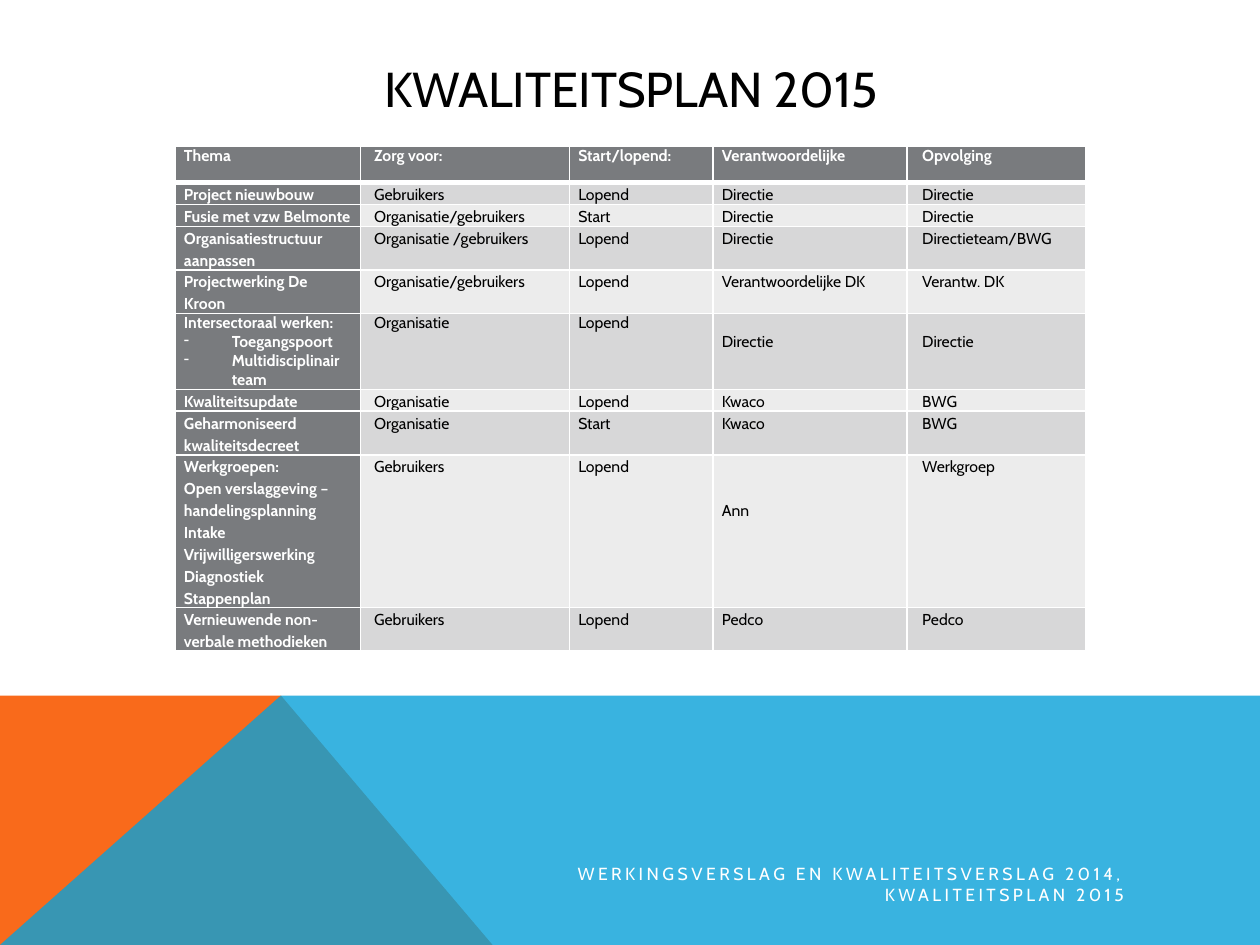
import pptx
import pptx.enum.text
import pptx.oxml.ns
import pptx.util
from lxml import etree
from pptx.dml.color import RGBColor

# Content
TITLE = "KWALITEITSPLAN 2015"
FOOTER = "WERKINGSVERSLAG EN KWALITEITSVERSLAG 2014, KWALITEITSPLAN 2015"
HEADER = ["Thema", "Zorg voor:", "Start/lopend:", "Verantwoordelijke", "Opvolging"]
# A theme that starts with "- " is a bullet under the first line
PLAN = [
    (["Project nieuwbouw"], "Gebruikers", "Lopend", "Directie", "Directie"),
    (["Fusie met vzw Belmonte"], "Organisatie/gebruikers", "Start", "Directie", "Directie"),
    (["Organisatiestructuur aanpassen"], "Organisatie /gebruikers", "Lopend", "Directie",
     "Directieteam/BWG"),
    (["Projectwerking De Kroon"], "Organisatie/gebruikers", "Lopend", "Verantwoordelijke DK",
     "Verantw. DK"),
    (["Intersectoraal werken:", "- Toegangspoort", "- Multidisciplinair team"],
     "Organisatie", "Lopend", "Directie", "Directie"),
    (["Kwaliteitsupdate"], "Organisatie", "Lopend", "Kwaco", "BWG"),
    (["Geharmoniseerd kwaliteitsdecreet"], "Organisatie", "Start", "Kwaco", "BWG"),
    (["Werkgroepen:", "Open verslaggeving – handelingsplanning", "Intake",
      "Vrijwilligerswerking", "Diagnostiek", "Stappenplan"],
     "Gebruikers", "Lopend", "Ann", "Werkgroep"),
    (["Vernieuwende non-verbale methodieken"], "Gebruikers", "Lopend", "Pedco", "Pedco"),
]

# Layout and style
COLORS = {"orange": "F96A1B", "blue": "08A1D9", "dark": "797B7E", "odd": "D7D7D8",
          "even": "ECECEC", "white": "FFFFFF", "black": "000000"}
FONT = "Cabin"
WIDTH, HEIGHT = 10, 7.5
BAND_TOP, PEAK = 5.52, 2.23
COLUMNS = [1.47, 1.66, 1.14, 1.54, 1.42]
ROWS = [0.29, 0.17, 0.17, 0.34, 0.34, 0.59, 0.17, 0.34, 1.18, 0.34]
COLUMN_INDENT = {1: 0.04, 4: 0.05}
LOWERED = {(5, 3): 0.15, (5, 4): 0.15, (8, 3): 0.35}  # text set lower in its cell
BULLET_ROW, BULLET_INDENT = 5, 0.38
inch = pptx.util.Inches


def color(name):
    return RGBColor.from_string(COLORS[name])


def add_run(paragraph, text, size, color_name, bold=False):
    run = paragraph.add_run()
    run.text = text
    run.font.name, run.font.size, run.font.bold = FONT, pptx.util.Pt(size), bold
    run.font.color.rgb = color(color_name)
    return run


def add_xml(parent, tag, **attributes):
    return etree.SubElement(parent, pptx.oxml.ns.qn(tag), attributes)


def add_band(slide, points, color_name, opacity=100):
    corners = [(inch(x), inch(y)) for x, y in points]
    builder = slide.shapes.build_freeform(*corners[0])
    builder.add_line_segments(corners[1:], close=True)
    band = builder.convert_to_shape()
    band.shadow.inherit = False
    band.fill.solid()
    band.fill.fore_color.rgb = color(color_name)
    band.line.fill.background()
    if opacity < 100:
        fill = band._element.spPr.find(".//" + pptx.oxml.ns.qn("a:srgbClr"))
        add_xml(fill, "a:alpha", val=str(opacity * 1000))


def style_cell(cell, row, column):
    properties = cell._tc.get_or_add_tcPr()
    for side in "LRTB":
        heavy = (row, side) in [(0, "B"), (1, "T")]
        border = add_xml(properties, f"a:ln{side}", w=str(pptx.util.Pt(3 if heavy else 1)))
        add_xml(add_xml(border, "a:solidFill"), "a:srgbClr", val=COLORS["white"])
    cell.fill.solid()
    shade = "dark" if row == 0 or column == 0 else ("odd" if row % 2 else "even")
    cell.fill.fore_color.rgb = color(shade)
    cell.margin_left = cell.margin_right = inch(0.07)
    cell.margin_top = inch(LOWERED.get((row, column), 0))
    cell.margin_bottom = 0


def fill_cell(cell, lines, row, column):
    strong = row == 0 or column == 0
    for number, line in enumerate(lines):
        frame = cell.text_frame
        paragraph = frame.add_paragraph() if number else frame.paragraphs[0]
        if row not in (0, BULLET_ROW):
            paragraph.line_spacing = 1.15
        properties = paragraph._p.get_or_add_pPr()
        if line.startswith("- "):
            line = line[2:]
            properties.set("marL", str(inch(BULLET_INDENT)))
            properties.set("indent", str(-inch(BULLET_INDENT)))
            add_xml(properties, "a:buChar", char="-")
        elif column in COLUMN_INDENT:
            properties.set("marL", str(inch(COLUMN_INDENT[column])))
        add_run(paragraph, line, 9, "white" if strong else "black", strong)


def add_plan(slide):
    frame = slide.shapes.add_table(len(ROWS), len(COLUMNS), inch(1.39), inch(1.16),
                                   inch(sum(COLUMNS)), inch(sum(ROWS)))
    plan = frame.table
    for column, width in zip(plan.columns, COLUMNS):
        column.width = inch(width)
    for row, height in zip(plan.rows, ROWS):
        row.height = inch(height)
    for r, entries in enumerate([HEADER] + PLAN):
        for c, entry in enumerate(entries):
            cell = plan.cell(r, c)
            style_cell(cell, r, c)
            fill_cell(cell, [entry] if isinstance(entry, str) else entry, r, c)


def main():
    deck = pptx.Presentation()
    deck.slide_width, deck.slide_height = inch(WIDTH), inch(HEIGHT)
    slide = deck.slides.add_slide(deck.slide_layouts[5])

    # Coloured bands at the foot
    add_band(slide, [(0, HEIGHT), (0, BAND_TOP), (PEAK, BAND_TOP), (3.91, HEIGHT)], "orange")
    add_band(slide, [(0, HEIGHT), (PEAK, BAND_TOP), (WIDTH, BAND_TOP), (WIDTH, HEIGHT)],
             "blue", 80)

    # Title
    title = slide.shapes.title
    title.left, title.top, title.width, title.height = map(inch, (0.9, 0.4, 8.22, 0.6))
    title.text_frame.vertical_anchor = pptx.enum.text.MSO_ANCHOR.MIDDLE
    heading = title.text_frame.paragraphs[0]
    heading.alignment = pptx.enum.text.PP_ALIGN.CENTER
    add_run(heading, TITLE, 28, "black")

    # Footer
    footer = slide.shapes.add_textbox(*map(inch, (3.85, 6.87, 5.17, 0.3))).text_frame
    footer.word_wrap = True
    footer.vertical_anchor = pptx.enum.text.MSO_ANCHOR.MIDDLE
    footer.paragraphs[0].alignment = pptx.enum.text.PP_ALIGN.RIGHT
    caption = add_run(footer.paragraphs[0], FOOTER, 10, "white")
    caption._r.get_or_add_rPr().set("spc", "200")

    add_plan(slide)
    deck.save("out.pptx")


if __name__ == "__main__":
    main()
